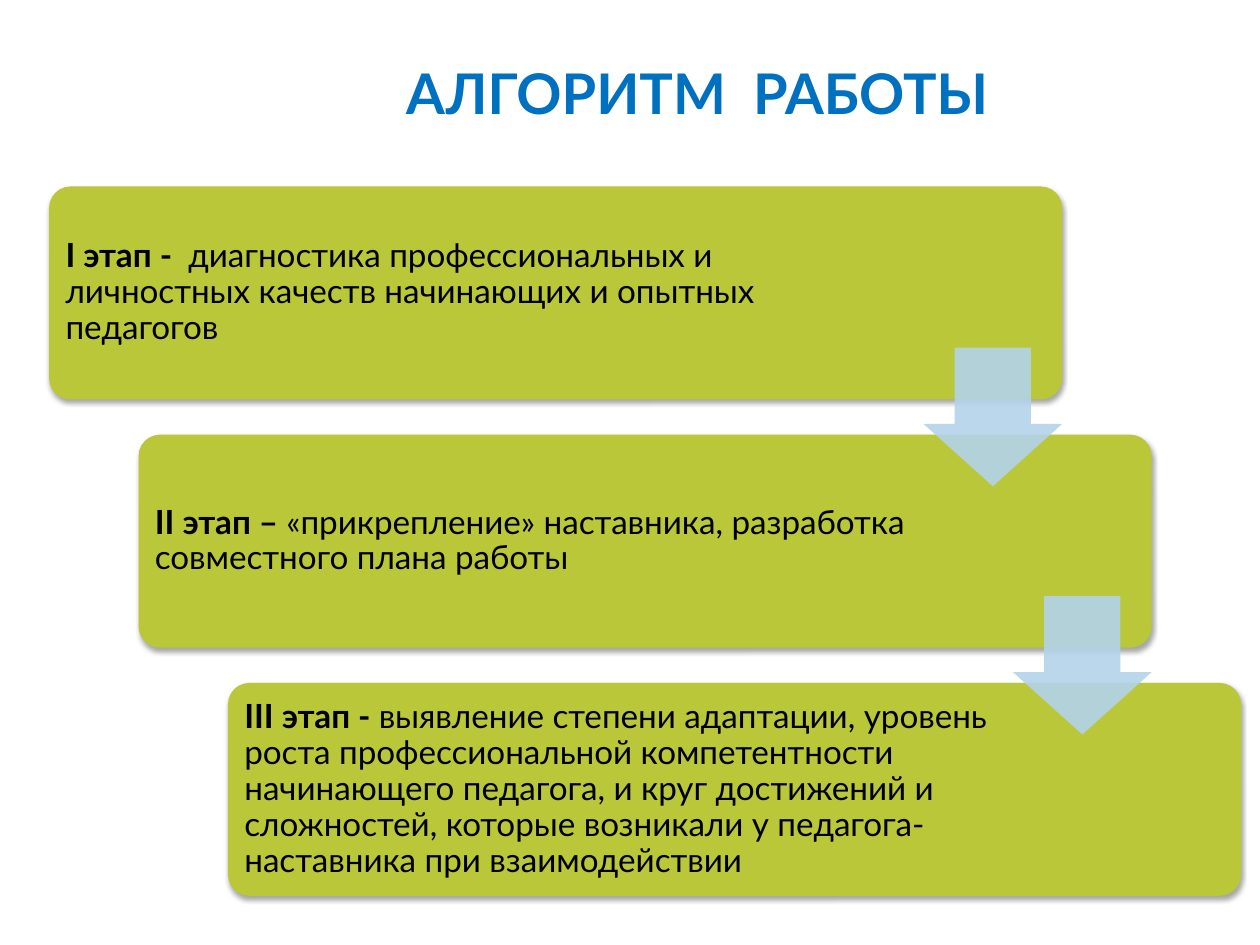
from lxml import etree
from pptx import Presentation
from pptx.dml.color import RGBColor
from pptx.enum.shapes import MSO_SHAPE as Preset
from pptx.enum.text import MSO_ANCHOR as Anchor, PP_ALIGN as Align
from pptx.oxml import parse_xml
from pptx.oxml.ns import nsdecls, qn
from pptx.util import Inches, Pt

BLUE = RGBColor(0x00, 0x70, 0xC0)
GREEN = RGBColor(0xB9, 0xC7, 0x39)
PALE_BLUE = RGBColor(0xB3, 0xD3, 0xEA)
BLACK = RGBColor(0, 0, 0)

FONT = "Lato"
CARD_LEFT, CARD_TOP, CARD_WIDTH, CARD_HEIGHT = 0.39, 1.48, 8.04, 1.69
STEP_X, STEP_Y = 0.71, 1.97
CARD_PADDING = 0.05
ARROW_LEFT, ARROW_TOP, ARROW_SIZE = 7.33, 2.76, 1.1

# Bold heading, description, text width
STAGES = [
    ("I этап -  ",
     "диагностика профессиональных и личностных качеств начинающих и опытных педагогов",
     6.21),
    ("II этап – ",
     "«прикрепление» наставника, разработка совместного плана работы",
     6.13),
    ("III этап - ",
     "выявление степени адаптации, уровень роста профессиональной компетентности "
     "начинающего педагога, и круг достижений и сложностей, которые возникали "
     "у педагога-наставника при взаимодействии",
     6.13),
]


def apply_format(target, values):
    for name, value in values.items():
        setattr(target, name, value)


def add_text(slide, box, runs, size, color, margin, paragraph_format):
    """Add a middle-anchored text box; runs are (text, bold) pairs."""
    frame = slide.shapes.add_textbox(*map(Inches, box)).text_frame
    apply_format(frame, {"word_wrap": True, "vertical_anchor": Anchor.MIDDLE})
    for side in ("left", "top", "right", "bottom"):
        setattr(frame, f"margin_{side}", Inches(margin))
    paragraph = frame.paragraphs[0]
    apply_format(paragraph, paragraph_format)
    for text, bold in runs:
        run = paragraph.add_run()
        run.text = text
        apply_format(run.font, {"name": FONT, "size": Pt(size), "bold": bold})
        run.font.color.rgb = color


def add_filled_shape(slide, preset, box, adjustments, color):
    shape = slide.shapes.add_shape(preset, *map(Inches, box))
    for index, value in enumerate(adjustments):
        shape.adjustments[index] = value
    shape.fill.solid()
    shape.fill.fore_color.rgb = color
    shape.line.fill.background()
    shape.shadow.inherit = False
    return shape


def add_soft_shadow(shape):
    effects = shape._element.spPr.find(qn("a:effectLst"))
    effects.append(parse_xml(
        f'<a:outerShdw {nsdecls("a")} blurRad="{Pt(3.1)}" dist="{Pt(1.8)}" '
        'dir="5400000" rotWithShape="0"><a:srgbClr val="000000">'
        '<a:alpha val="35000"/></a:srgbClr></a:outerShdw>'))


def add_card(slide, index, heading, description, text_width):
    left, top = CARD_LEFT + index * STEP_X, CARD_TOP + index * STEP_Y
    card = add_filled_shape(slide, Preset.ROUNDED_RECTANGLE,
                            (left, top, CARD_WIDTH, CARD_HEIGHT), [0.1], GREEN)
    add_soft_shadow(card)
    text_box = (left + CARD_PADDING, top + CARD_PADDING,
                text_width, CARD_HEIGHT - 2 * CARD_PADDING)
    add_text(slide, text_box, [(heading, True), (description, False)], 19, BLACK,
             0.08, {"alignment": Align.LEFT, "line_spacing": 0.9})


def add_arrow(slide, index):
    """Add the translucent arrow from one card to the next."""
    box = (ARROW_LEFT + index * STEP_X, ARROW_TOP + index * STEP_Y,
           ARROW_SIZE, ARROW_SIZE)
    arrow = add_filled_shape(slide, Preset.DOWN_ARROW, box, [0.55, 0.45], PALE_BLUE)
    color = arrow._element.spPr.find(qn("a:solidFill"))[0]
    etree.SubElement(color, qn("a:alpha"), val="90000")


def main():
    presentation = Presentation()
    apply_format(presentation,
                 {"slide_width": Inches(10), "slide_height": Inches(7.5)})
    slide = presentation.slides.add_slide(presentation.slide_layouts[6])

    add_text(slide, (1.57, 0.48, 7.93, 0.5), [("АЛГОРИТМ  РАБОТЫ", True)], 32, BLUE,
             0, {"alignment": Align.CENTER})
    for index, stage in enumerate(STAGES):
        add_card(slide, index, *stage)
    for index in range(len(STAGES) - 1):
        add_arrow(slide, index)

    presentation.save("out.pptx")


if __name__ == "__main__":
    main()
